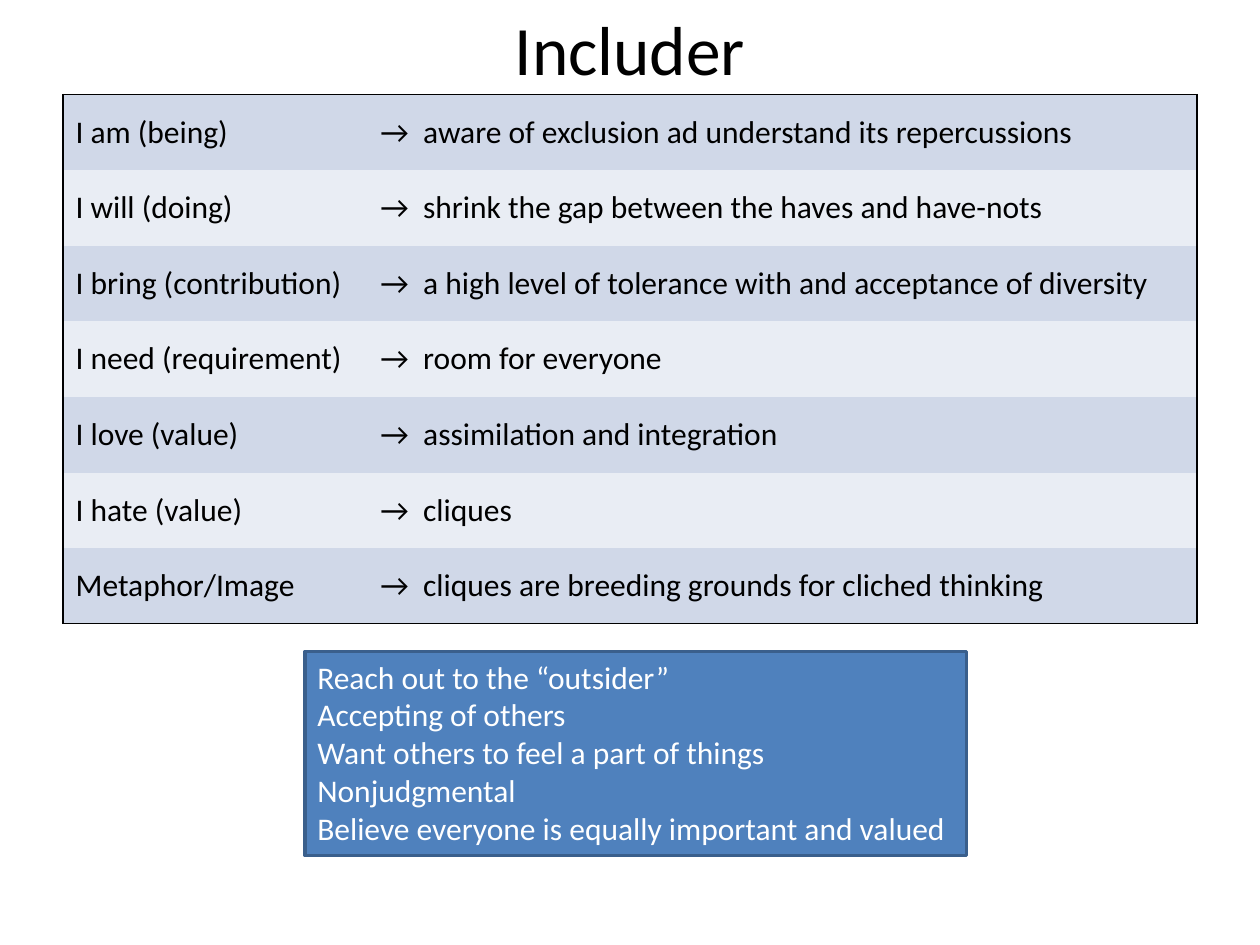
"""Build the Includer strength slide: title, statement table and trait box."""
import pptx
import pptx.dml.color
import pptx.enum.shapes
import pptx.enum.text
import pptx.oxml
import pptx.oxml.ns
import pptx.util
from pptx.util import Inches

COLORS = {
    "text": "000000",
    "border": "000000",
    "dark_band": "D0D8E8",
    "light_band": "E9EDF4",
    "box": "4F81BD",
    "box_line": "3A5F8C",
    "box_text": "FFFFFF",
}
STATEMENTS = [
    ("I am (being)", "aware of exclusion ad understand its repercussions"),
    ("I will (doing)", "shrink the gap between the haves and have-nots"),
    ("I bring (contribution)", "a high level of tolerance with and acceptance of diversity"),
    ("I need (requirement)", "room for everyone"),
    ("I love (value)", "assimilation and integration"),
    ("I hate (value)", "cliques"),
    ("Metaphor/Image", "cliques are breeding grounds for cliched thinking"),
]
TRAITS = [
    "Reach out to the “outsider”",
    "Accepting of others",
    "Want others to feel a part of things",
    "Nonjudgmental",
    "Believe everyone is equally important and valued",
]


def write(frame, text, size, color, align=pptx.enum.text.PP_ALIGN.LEFT):
    frame.text = text
    for para in frame.paragraphs:
        para.alignment = align
        for span in para.runs:
            span.font.name = "Calibri"
            span.font.size = pptx.util.Pt(size)
            span.font.color.rgb = pptx.dml.color.RGBColor.from_string(COLORS[color])


def set_edge(cell, side, visible):
    paint = "<a:noFill/>"
    if visible:
        paint = f'<a:solidFill><a:srgbClr val="{COLORS["border"]}"/></a:solidFill>'
    edge = pptx.oxml.parse_xml(
        f'<a:ln{side} {pptx.oxml.ns.nsdecls("a")} w="12700">{paint}</a:ln{side}>'
    )
    cell._tc.get_or_add_tcPr().append(edge)


deck = pptx.Presentation()
deck.slide_width, deck.slide_height = Inches(10), Inches(7.5)
page = deck.slides.add_slide(deck.slide_layouts[6])

title = page.shapes.add_textbox(Inches(0.5), Inches(0.17), Inches(9), Inches(0.42))
title.text_frame.word_wrap = True
title.text_frame.vertical_anchor = pptx.enum.text.MSO_ANCHOR.MIDDLE
write(title.text_frame, "Includer", 39.6, "text", pptx.enum.text.PP_ALIGN.CENTER)

table = page.shapes.add_table(
    len(STATEMENTS), 2, Inches(0.5), Inches(0.75), Inches(9), Inches(4.2)
).table
table.first_row = False
table.horz_banding = False
table.columns[0].width = Inches(2.42)
table.columns[1].width = Inches(6.58)

last_row = len(STATEMENTS) - 1
for row, (label, statement) in enumerate(STATEMENTS):
    band = "light_band" if row % 2 else "dark_band"
    for column, text in enumerate((label, f"→  {statement}")):
        cell = table.cell(row, column)
        cell.vertical_anchor = pptx.enum.text.MSO_ANCHOR.MIDDLE
        write(cell.text_frame, text, 18, "text")
        outer_edges = {
            "L": column == 0,
            "R": column == 1,
            "T": row == 0,
            "B": row == last_row,
        }
        for side, visible in outer_edges.items():
            set_edge(cell, side, visible)
        cell.fill.solid()
        cell.fill.fore_color.rgb = pptx.dml.color.RGBColor.from_string(COLORS[band])

box = page.shapes.add_shape(
    pptx.enum.shapes.MSO_SHAPE.RECTANGLE, Inches(2.42), Inches(5.17), Inches(5.25), Inches(1.62)
)
box.shadow.inherit = False
box.fill.solid()
box.fill.fore_color.rgb = pptx.dml.color.RGBColor.from_string(COLORS["box"])
box.line.color.rgb = pptx.dml.color.RGBColor.from_string(COLORS["box_line"])
box.line.width = pptx.util.Pt(2)
box.text_frame.word_wrap = True
box.text_frame.auto_size = pptx.enum.text.MSO_AUTO_SIZE.SHAPE_TO_FIT_TEXT
box.text_frame.vertical_anchor = pptx.enum.text.MSO_ANCHOR.TOP
write(box.text_frame, "\n".join(TRAITS), 18, "box_text")

deck.save("out.pptx")
